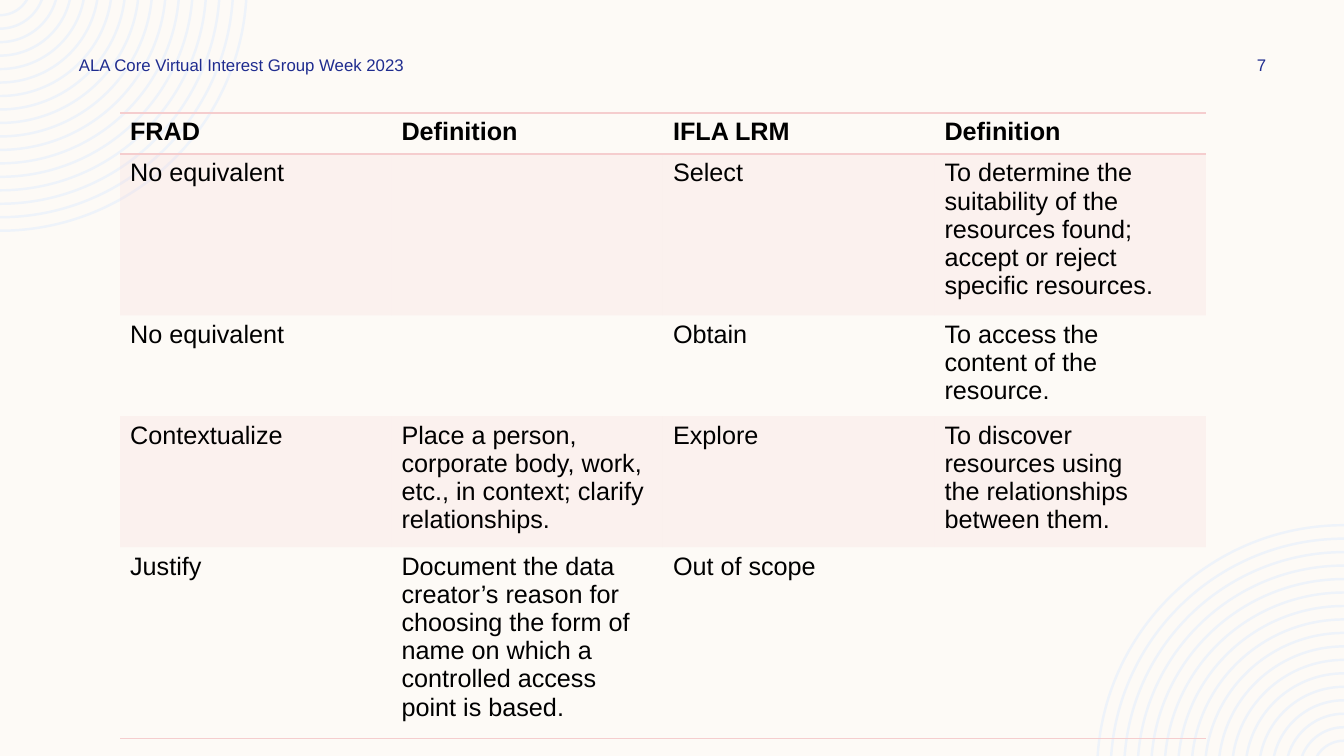
from math import asin, cos, pi, sin, tan

from lxml.etree import SubElement
from pptx import Presentation
from pptx.dml.color import RGBColor
from pptx.enum.text import MSO_ANCHOR, PP_ALIGN
from pptx.oxml import parse_xml
from pptx.oxml.ns import nsdecls, qn
from pptx.util import Pt

PAGE_SIZE = (1344, 756)
FONT = "Arial"
CREAM, PALE_BLUE, NAVY, ROSE, BLACK = "FDFAF6", "EEF3FA", "1F2C8F", "F5CDCE", "000000"

# text, (left, top, width, height), alignment
HEADER = [
    ("ALA Core Virtual Interest Group Week 2023", (69, 50, 353, 30), PP_ALIGN.LEFT),
    ("7", (1207, 50, 109, 30), PP_ALIGN.CENTER),
]
TABLE_BOX = (120, 113, 1086, 590)
ROW_HEIGHTS = [41, 151, 95, 123, 180]
# Each cell is a list of paragraphs
ROWS = [
    [["FRAD"], ["Definition"], ["IFLA LRM"], ["Definition"]],
    [["No equivalent"], [], ["Select"],
     ["To determine the", "suitability of the",
      "resources found; accept or reject specific resources."]],
    [["No equivalent"], [], ["Obtain"],
     ["To access the", "content of the resource."]],
    [["Contextualize"],
     ["Place a person, corporate body, work, etc., in context; clarify relationships."],
     ["Explore"],
     ["To discover", "resources using", "the relationships", "between them."]],
    [["Justify"],
     ["Document the data creator’s reason for choosing the form of name "
      "on which a controlled access point is based."],
     ["Out of scope"], []],
]
BORDERS = {0: ("lnT", "lnB"), len(ROWS) - 1: ("lnB",)}
BANDED_ROWS = (1, 3)
BAND_OPACITY = 20
PLAIN_TABLE_STYLE = "{2D5ABB26-0587-4C30-8999-92F81FD0307C}"

# centre x, centre y, direction in which the rings open
RING_CORNERS = [(0, -16, 1), (1344, 772, -1)]
RING_COUNT, OUTER_RADIUS, RING_STEP, RING_WIDTH = 17, 248, 13.47, 2.45
CENTRE_OFFSET = 16


def px(length):
    return round(length * 914400 / 100.8)


def color(hex_string):
    return RGBColor.from_string(hex_string)


def add_text(para, text, size, hex_string, bold=False):
    span = para.add_run()
    span.text = text
    span.font.name = FONT
    span.font.size = Pt(size)
    span.font.bold = bold
    span.font.color.rgb = color(hex_string)


def arc(center_x, center_y, direction, radius):
    """Four Bezier points of a ring from the slide's horizontal to its vertical edge."""
    start = asin(CENTRE_OFFSET / radius)
    reach = radius * 4 / 3 * tan((pi / 2 - start) / 4)
    first = (radius * cos(start), radius * sin(start))
    offsets = [
        first,
        (first[0] - reach * sin(start), first[1] + reach * cos(start)),
        (reach, radius),
        (0, radius),
    ]
    return [(px(center_x + direction * x), px(center_y + direction * y)) for x, y in offsets]


def curve(segments):
    """Turn three straight segments into one Bezier segment through their points."""
    bezier = parse_xml(f'<a:cubicBezTo {nsdecls("a")}/>')
    segments[0].addprevious(bezier)
    for segment in segments:
        bezier.append(segment[0])
        segment.getparent().remove(segment)


def add_rings(page, corner):
    outlines = []
    for index in range(RING_COUNT):
        radius = OUTER_RADIUS - RING_STEP * index
        outlines.append(arc(*corner, radius) + arc(*corner, radius - RING_WIDTH)[::-1])
    builder = page.shapes.build_freeform(*outlines[0][0], scale=1.0)
    for index, outline in enumerate(outlines):
        if index:
            builder.move_to(*outline[0])
        builder.add_line_segments(outline[1:], close=True)
    rings = builder.convert_to_shape()
    segments = list(rings._element.iter(qn("a:lnTo")))
    for first in range(0, len(segments), 7):
        curve(segments[first:first + 3])
        curve(segments[first + 4:first + 7])
    rings.shadow.inherit = False
    rings.fill.solid()
    rings.fill.fore_color.rgb = color(PALE_BLUE)
    rings.line.fill.background()


def add_header(page, text, bounds, alignment):
    box = page.shapes.add_textbox(*map(px, bounds))
    frame = box.text_frame
    frame.word_wrap = True
    frame.vertical_anchor = MSO_ANCHOR.MIDDLE
    para = frame.paragraphs[0]
    para.alignment = alignment
    add_text(para, text, 12, NAVY)


def format_cell(cell, row_index):
    properties = cell._tc.get_or_add_tcPr()
    if row_index in BANDED_ROWS:
        cell.fill.solid()
        cell.fill.fore_color.rgb = color(ROSE)
        alpha = SubElement(properties.find(".//" + qn("a:srgbClr")), qn("a:alpha"))
        alpha.set("val", str(BAND_OPACITY * 1000))
    else:
        cell.fill.background()
    for position, side in enumerate(BORDERS.get(row_index, ())):
        properties.insert(position, parse_xml(
            f'<a:{side} {nsdecls("a")} w="{int(Pt(1))}"><a:solidFill>'
            f'<a:srgbClr val="{ROSE}"/></a:solidFill></a:{side}>'))


def add_comparison_table(page):
    table = page.shapes.add_table(len(ROWS), len(ROWS[0]), *map(px, TABLE_BOX)).table
    table.horz_banding = False
    table._tbl.tblPr.find(qn("a:tableStyleId")).text = PLAIN_TABLE_STYLE
    for row_index, (row, height) in enumerate(zip(ROWS, ROW_HEIGHTS)):
        table.rows[row_index].height = px(height)
        for column_index, texts in enumerate(row):
            cell = table.cell(row_index, column_index)
            format_cell(cell, row_index)
            frame = cell.text_frame
            for index, text in enumerate(texts):
                para = frame.add_paragraph() if index else frame.paragraphs[0]
                add_text(para, text, 18, BLACK, bold=row_index == 0)


def main():
    deck = Presentation()
    deck.slide_width, deck.slide_height = map(px, PAGE_SIZE)
    page = deck.slides.add_slide(deck.slide_layouts[6])
    page.background.fill.solid()
    page.background.fill.fore_color.rgb = color(CREAM)
    for corner in RING_CORNERS:
        add_rings(page, corner)
    for entry in HEADER:
        add_header(page, *entry)
    add_comparison_table(page)
    deck.save("out.pptx")


if __name__ == "__main__":
    main()
